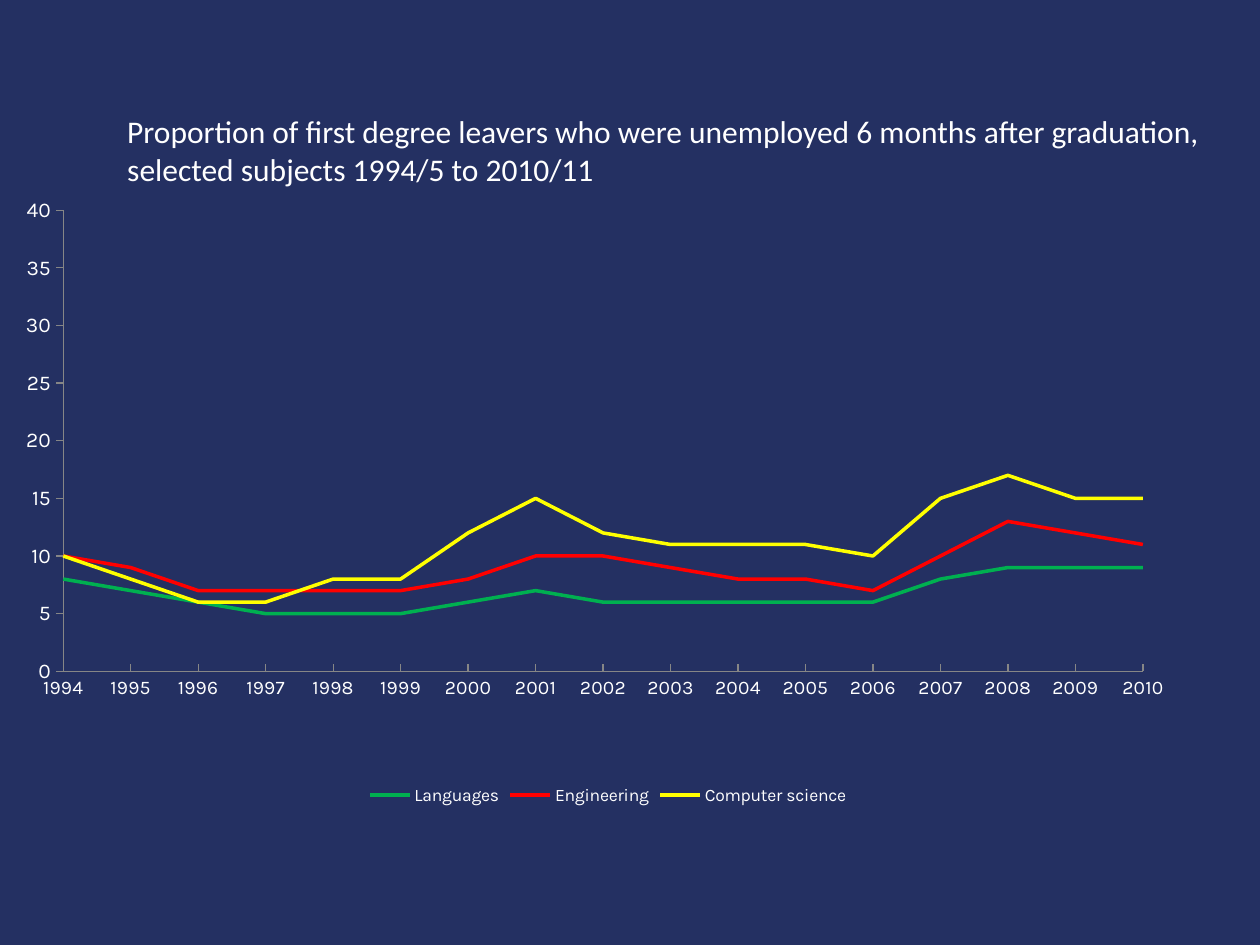
"""Build a slide with a line chart of graduate unemployment by subject."""
from dataclasses import dataclass
from typing import Any

import lxml.etree
import pptx
import pptx.chart.data
import pptx.dml.color
import pptx.enum.chart
import pptx.enum.text
import pptx.oxml
import pptx.oxml.ns
import pptx.util

Inches = pptx.util.Inches
TickMark = pptx.enum.chart.XL_TICK_MARK


@dataclass(frozen=True)
class Theme:
    """Colours, fonts and type sizes."""

    background: str = "243062"
    text: str = "FFFFFF"
    axis: str = "868686"
    languages: str = "00B050"
    engineering: str = "FF0000"
    computing: str = "FFFF00"
    title_font: str = "Calibri"
    chart_font: str = "Karla"
    title_size: int = 18
    legend_size: int = 10
    category_size: int = 11
    value_size: int = 12
    axis_width: float = 0.75
    series_width: float = 2


@dataclass(frozen=True)
class Subject:
    """One line of the chart."""

    name: str
    color: str
    rates: tuple[int, ...]


THEME = Theme()
YEARS = [str(year) for year in range(1994, 2011)]
SUBJECTS = (
    Subject("Languages", THEME.languages, (8, 7, 6, 5, 5, 5, 6, 7, 6, 6, 6, 6, 6, 8, 9, 9, 9)),
    Subject("Engineering", THEME.engineering,
            (10, 9, 7, 7, 7, 7, 8, 10, 10, 9, 8, 8, 7, 10, 13, 12, 11)),
    Subject("Computer science", THEME.computing,
            (10, 8, 6, 6, 8, 8, 12, 15, 12, 11, 11, 11, 10, 15, 17, 15, 15)),
)
TITLE = ("Proportion of first degree leavers who were unemployed 6 months after graduation, "
         "selected subjects 1994/5 to 2010/11")
PLOT_LAYOUT = {"x": 0.052, "y": 0.04, "w": 0.888, "h": 0.738}


def apply_format(target: Any, values: dict[str, Any]) -> None:
    """Set each named attribute on the target."""
    for name, value in values.items():
        setattr(target, name, value)


def format_font(font: Any, name: str, size: int) -> None:
    """Give a font its face, size and the theme's text colour."""
    apply_format(font, {"name": name, "size": pptx.util.Pt(size), "bold": False})
    font.color.rgb = pptx.dml.color.RGBColor.from_string(THEME.text)


def format_line(line: Any, color: str, width: float) -> None:
    """Give a line its colour and width."""
    line.color.rgb = pptx.dml.color.RGBColor.from_string(color)
    line.width = pptx.util.Pt(width)


def format_axis(axis: Any, size: int, values: dict[str, Any]) -> None:
    """Format an axis, its line and its labels."""
    apply_format(axis, {"has_major_gridlines": False, "minor_tick_mark": TickMark.NONE, **values})
    format_line(axis.format.line, THEME.axis, THEME.axis_width)
    format_font(axis.tick_labels.font, THEME.chart_font, size)


def place_plot(chart: Any) -> None:
    """Fix the inner plot area and start the lines on the value axis."""
    qualify = pptx.oxml.ns.qn
    plot_area = chart.element.find(".//" + qualify("c:plotArea"))
    for layout in plot_area.findall(qualify("c:layout")):
        plot_area.remove(layout)
    layout = lxml.etree.Element(qualify("c:layout"))
    manual = lxml.etree.SubElement(layout, qualify("c:manualLayout"))
    settings = {"layoutTarget": "inner", "xMode": "edge", "yMode": "edge", **PLOT_LAYOUT}
    for name, value in settings.items():
        lxml.etree.SubElement(manual, qualify("c:" + name), val=str(value))
    plot_area.insert(0, layout)
    value_axis = plot_area.find(qualify("c:valAx"))
    crossing = value_axis.find(qualify("c:crossBetween"))
    if crossing is None:
        crossing = lxml.etree.Element(qualify("c:crossBetween"))
        value_axis.find(qualify("c:crosses")).addnext(crossing)
    crossing.set("val", "midCat")


def add_title(slide: Any) -> None:
    """Fill and place the title placeholder."""
    title = slide.shapes.title
    apply_format(title, {"left": Inches(0.91), "top": Inches(0.84),
                         "width": Inches(9), "height": Inches(0.84)})
    frame = title.text_frame
    frame.text = TITLE
    apply_format(frame, {"word_wrap": True, "auto_size": pptx.enum.text.MSO_AUTO_SIZE.NONE,
                         "vertical_anchor": pptx.enum.text.MSO_ANCHOR.TOP})
    paragraph = frame.paragraphs[0]
    paragraph.alignment = pptx.enum.text.PP_ALIGN.LEFT
    format_font(paragraph.runs[0].font, THEME.title_font, THEME.title_size)


def add_unemployment_chart(slide: Any) -> None:
    """Draw one line for each subject."""
    data = pptx.chart.data.CategoryChartData()
    data.categories = YEARS
    for subject in SUBJECTS:
        data.add_series(subject.name, subject.rates)
    chart = slide.shapes.add_chart(
        pptx.enum.chart.XL_CHART_TYPE.LINE, Inches(0), Inches(1.47),
        Inches(9.65), Inches(4.96), data).chart
    apply_format(chart, {"has_title": False, "has_legend": True})
    format_font(chart.font, THEME.chart_font, THEME.legend_size)
    apply_format(chart.legend, {"position": pptx.enum.chart.XL_LEGEND_POSITION.BOTTOM,
                                "include_in_layout": False})
    format_font(chart.legend.font, THEME.chart_font, THEME.legend_size)
    format_axis(chart.category_axis, THEME.category_size, {"major_tick_mark": TickMark.INSIDE})
    format_axis(chart.value_axis, THEME.value_size, {
        "major_tick_mark": TickMark.OUTSIDE, "minimum_scale": 0,
        "maximum_scale": 40, "major_unit": 5})
    for series, subject in zip(chart.plots[0].series, SUBJECTS):
        series.smooth = False
        series.marker.style = pptx.enum.chart.XL_MARKER_STYLE.NONE
        format_line(series.format.line, subject.color, THEME.series_width)
    chart.plots[0].vary_by_categories = False
    place_plot(chart)


def main() -> None:
    """Build and save the presentation."""
    presentation = pptx.Presentation()
    apply_format(presentation, {"slide_width": Inches(10), "slide_height": Inches(7.5)})
    slide = presentation.slides.add_slide(presentation.slide_layouts[5])
    fill = slide.background.fill
    fill.solid()
    fill.fore_color.rgb = pptx.dml.color.RGBColor.from_string(THEME.background)
    add_title(slide)
    add_unemployment_chart(slide)
    presentation.save("out.pptx")


if __name__ == "__main__":
    main()
